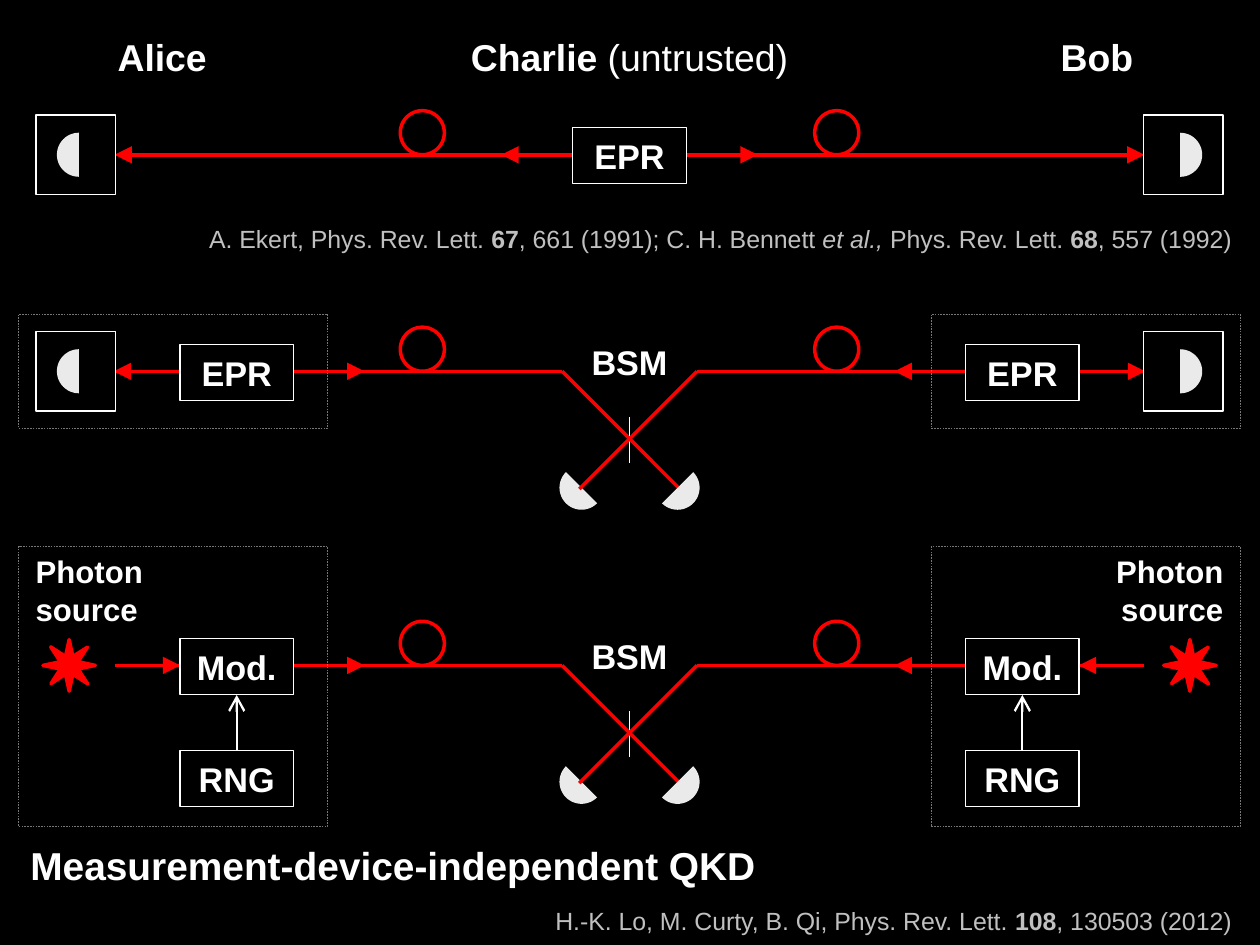
from lxml.etree import SubElement
from pptx import Presentation
from pptx.dml.color import RGBColor
from pptx.enum.dml import MSO_LINE
from pptx.enum.shapes import MSO_CONNECTOR, MSO_SHAPE
from pptx.enum.text import MSO_ANCHOR, PP_ALIGN
from pptx.oxml.ns import qn
from pptx.util import Cm, Pt

BLACK = RGBColor(0x00, 0x00, 0x00)
WHITE = RGBColor(0xFF, 0xFF, 0xFF)
RED = RGBColor(0xFF, 0x00, 0x00)
PALE = RGBColor(0xEA, 0xEA, 0xEA)
SILVER = RGBColor(0xC0, 0xC0, 0xC0)
GREY = RGBColor(0x77, 0x77, 0x77)

# Content: each run is (text, style), with style b = bold, i = italic
PARTIES = [
    (-10.6, [("Alice", "b")]),
    (0, [("Charlie", "b"), (" (untrusted)", "")]),
    (10.6, [("Bob", "b")]),
]
CITATIONS = [
    (4.8, [("A. Ekert, Phys. Rev. Lett. ", ""), ("67", "b"),
           (", 661 (1991); C. H. Bennett ", ""), ("et al.,", "i"),
           (" Phys. Rev. Lett. ", ""), ("68", "b"), (", 557 (1992)", "")]),
    (20.27, [("H.-K. Lo, M. Curty, B. Qi, Phys. Rev. Lett. ", ""),
             ("108", "b"), (", 130503 (2012)", "")]),
]
HEADING = "Measurement-device-independent QKD"
SOURCE_LABEL = ["Photon", "source"]
PAIR_SOURCE, MEASUREMENT, MODULATOR, RANDOM = "EPR", "BSM", "Mod.", "RNG"

# Geometry in cm: distances from the vertical axis of symmetry
WIDTH, HEIGHT, CENTRE = 28.58, 21.43, 14.28
DIRECT_ROW, SWAP_ROW, MDI_ROW = 3.51, 8.42, 15.09
STATION, LOOP, DETECTOR, FIBRE_END = 8.91, 4.7, 12.56, 11.68
BEND, CROSSED, DROP = 1.53, 1.14, 2.67
SIDES = (-1, 1)

deck = Presentation()
deck.slide_width, deck.slide_height = Cm(WIDTH), Cm(HEIGHT)
page = deck.slides.add_slide(deck.slide_layouts[6])
page.background.fill.solid()
page.background.fill.fore_color.rgb = BLACK


def write(box, paragraphs, size, color=WHITE, align=PP_ALIGN.CENTER,
          anchor=MSO_ANCHOR.MIDDLE, insets=(0, 0)):
    frame = box.text_frame
    frame.word_wrap = True
    frame.vertical_anchor = anchor
    frame.margin_left = frame.margin_right = Cm(insets[0])
    frame.margin_top = frame.margin_bottom = Cm(insets[1])
    for index, runs in enumerate(paragraphs):
        para = frame.add_paragraph() if index else frame.paragraphs[0]
        para.alignment = align
        for text, style in runs:
            span = para.add_run()
            span.text = text
            span.font.name, span.font.size = "Arial", Pt(size)
            span.font.bold, span.font.italic = "b" in style, "i" in style
            span.font.color.rgb = color
    return frame


def add_text(left, top, width, height, paragraphs, size, **options):
    box = page.shapes.add_textbox(Cm(left), Cm(top), Cm(width), Cm(height))
    return write(box, paragraphs, size, **options)


def add_label(x, y, width, height, paragraphs, size, **options):
    add_text(CENTRE + x - width / 2, y - height / 2, width, height,
             paragraphs, size, **options)


def add_figure(kind, x, y, width, height, fill=None, line=None, weight=1, turn=0):
    """Place a shape by its middle, x being measured from the axis."""
    shape = page.shapes.add_shape(kind, Cm(CENTRE + x - width / 2), Cm(y - height / 2),
                                  Cm(width), Cm(height))
    shape.shadow.inherit = False
    shape.rotation = turn
    if fill is None:
        shape.fill.background()
    else:
        shape.fill.solid()
        shape.fill.fore_color.rgb = fill
    if line is None:
        shape.line.fill.background()
    else:
        shape.line.color.rgb = line
        shape.line.width = Pt(weight)
    return shape


def add_line(x1, y1, x2, y2, color=RED, weight=2.25, head=None, tail=None):
    line = page.shapes.add_connector(MSO_CONNECTOR.STRAIGHT, Cm(CENTRE + x1), Cm(y1),
                                     Cm(CENTRE + x2), Cm(y2))
    line.line.color.rgb = color
    line.line.width = Pt(weight)
    outline = line.line._get_or_add_ln()
    for tag, kind in (("a:headEnd", head), ("a:tailEnd", tail)):
        if kind:
            SubElement(outline, qn(tag), type=kind, w="lg", len="lg")
    SubElement(line._element.spPr, qn("a:effectLst"))


def add_arrow(x1, x2, y):
    add_line(x1, y, x2, y, tail="triangle")


def add_station(x, y, name):
    box = add_figure(MSO_SHAPE.RECTANGLE, x, y, 2.58, 1.27, BLACK, WHITE)
    write(box, [[(name, "b")]], 22)


def add_loop(side, y):
    add_figure(MSO_SHAPE.OVAL, side * LOOP, y - 0.5, 1, 1, line=RED, weight=2.25)


def add_half_disc(x, y, turn):
    disc = add_figure(MSO_SHAPE.CHORD, x, y, 1, 1, PALE, turn=turn)
    disc.adjustments[0], disc.adjustments[1] = 0, 108  # 0 to 180 degrees


def add_detector(side, y):
    add_figure(MSO_SHAPE.RECTANGLE, side * DETECTOR, y, 1.8, 1.8, BLACK, WHITE)
    add_half_disc(side * 12.49, y, -90 * side % 360)


def add_frame(side, y, height):
    frame = add_figure(MSO_SHAPE.RECTANGLE, side * 10.35, y, 7.01, height,
                       line=GREY, weight=0.25)
    frame.line.dash_style = MSO_LINE.DASH


def add_measurement(y):
    """Fibres from both sides, crossing at a beam splitter."""
    add_line(0, y + 1.04, 0, y + 2.08, WHITE, 1)
    for side in SIDES:
        add_line(side * FIBRE_END, y, side * BEND, y)
        add_line(side * BEND, y, -side * CROSSED, y + DROP)
        add_arrow(side * 6.72, side * 6.01, y)
        add_loop(side, y)
        add_half_disc(side * 1.09, y + 2.64, -45 * side % 360)
    add_label(0, y - 0.22, 2.58, 1.27, [[(MEASUREMENT, "b")]], 22)


# Names of the parties
for x, runs in PARTIES:
    add_label(x, 1.28, 7.8, 1.1, [runs], 24)

# Row 1: entangled pairs sent from the middle
for reach in (FIBRE_END, 2.91):
    add_line(-reach, DIRECT_ROW, reach, DIRECT_ROW, head="triangle", tail="triangle")
add_station(0, DIRECT_ROW + 0.02, PAIR_SOURCE)
for side in SIDES:
    add_loop(side, DIRECT_ROW)
    add_detector(side, DIRECT_ROW)

# Row 2: pairs on both sides, measured in the middle
add_measurement(SWAP_ROW)
for side in SIDES:
    add_arrow(side * 11, side * 11.7, SWAP_ROW)
    add_station(side * STATION, SWAP_ROW + 0.03, PAIR_SOURCE)
    add_detector(side, SWAP_ROW)
    add_frame(side, SWAP_ROW, 2.59)

# Row 3: modulated photon sources on both sides
add_measurement(MDI_ROW)
for side, align in zip(SIDES, (PP_ALIGN.LEFT, PP_ALIGN.RIGHT)):
    add_arrow(side * 10.88, side * 10.19, MDI_ROW)
    add_line(side * STATION, MDI_ROW + 1.94, side * STATION, MDI_ROW + 0.67,
             WHITE, 1.5, tail="arrow")
    add_station(side * STATION, MDI_ROW + 0.03, MODULATOR)
    add_station(side * STATION, MDI_ROW + 2.57, RANDOM)
    for turn in (45, 0):
        add_figure(MSO_SHAPE.STAR_4_POINT, side * 12.71, MDI_ROW, 1.19, 1.17,
                   RED, RED, 2.25, turn)
    add_label(side * 11.77, MDI_ROW - 1.71, 3.4, 1.8,
              [[(word, "b")] for word in SOURCE_LABEL], 20, align=align)
    add_frame(side, MDI_ROW + 0.48, 6.35)

# Heading and citations
heading = add_text(0.69, 18.77, 27.48, 1.4, [[(HEADING, "b")]], 25,
                   align=PP_ALIGN.LEFT, anchor=MSO_ANCHOR.TOP)
heading.paragraphs[0].line_spacing = 1.3
for top, runs in CITATIONS:
    add_text(0.43, top, 27.76, 1.07, [runs], 16, color=SILVER, align=PP_ALIGN.RIGHT,
             anchor=MSO_ANCHOR.BOTTOM, insets=(0.25, 0.13))

deck.save("out.pptx")
